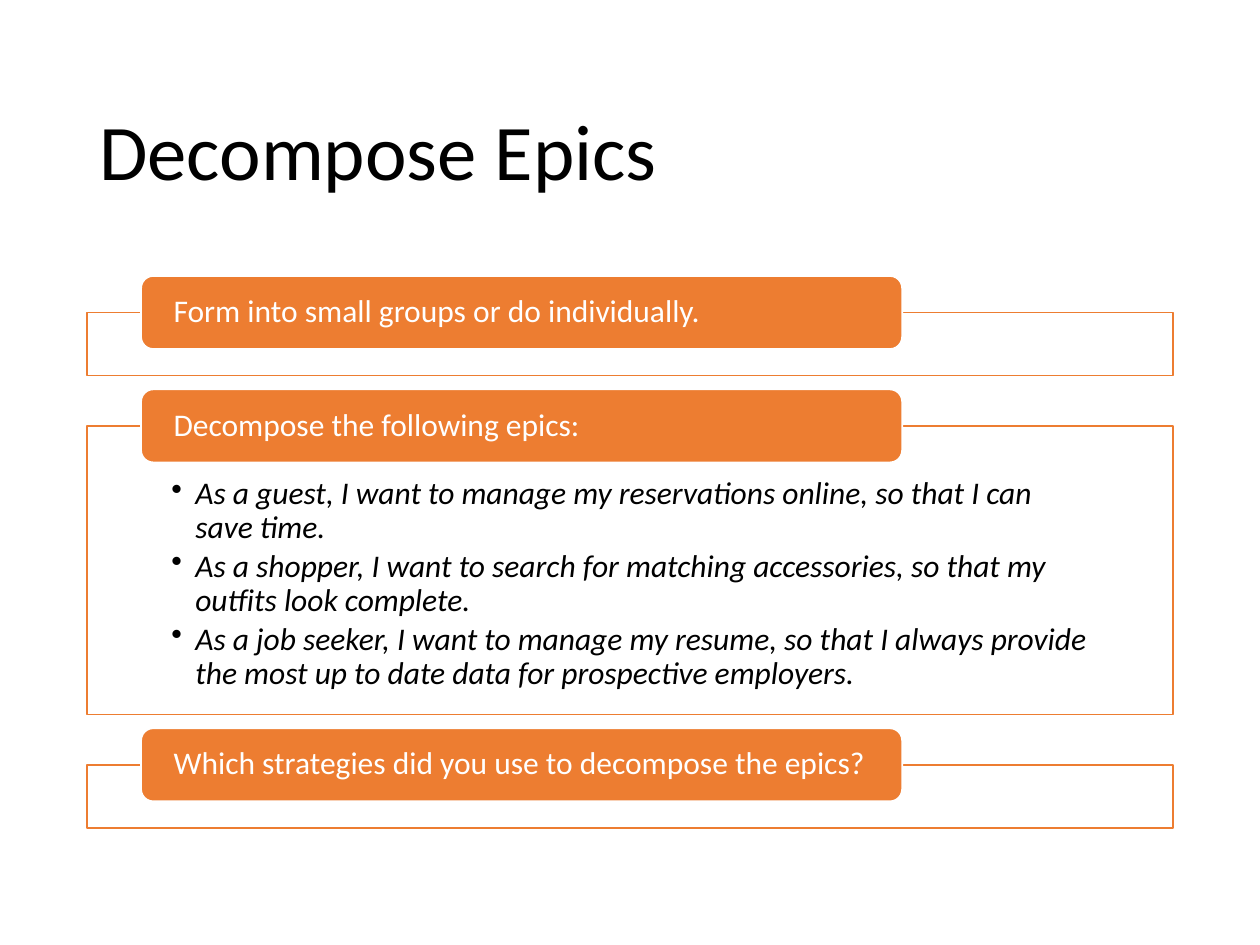
"""Build the Decompose Epics slide: three outlined panels, each with a heading tab."""
from dataclasses import dataclass

from lxml.etree import SubElement
from pptx import Presentation
from pptx.dml.color import RGBColor
from pptx.enum.shapes import MSO_SHAPE as Shape
from pptx.enum.text import MSO_ANCHOR as Anchor, PP_ALIGN as Align
from pptx.oxml.ns import qn
from pptx.util import Inches, Pt


@dataclass(frozen=True)
class Theme:
    font: str = "Calibri"
    accent: RGBColor = RGBColor(0xED, 0x7D, 0x31)
    light: RGBColor = RGBColor(0xFF, 0xFF, 0xFF)
    dark: RGBColor = RGBColor(0, 0, 0)
    title_size: Pt = Pt(45)
    body_size: Pt = Pt(18)


THEME = Theme()
LEFT, WIDTH = 0.69, 8.62
TAB_LEFT, TAB_WIDTH, TAB_HEIGHT = 1.12, 6.04, 0.58
FIRST_TOP, PANEL_OFFSET, GAP = 2.19, 0.29, 0.11
SECTIONS = [
    ("Form into small groups or do individually.", 0.5, []),
    ("Decompose the following epics:", 2.29, [
        "As a guest, I want to manage my reservations online, so that I can save time.",
        "As a shopper, I want to search for matching accessories, so that my outfits look complete.",
        "As a job seeker, I want to manage my resume, so that I always provide the most up to date "
        "data for prospective employers.",
    ]),
    ("Which strategies did you use to decompose the epics?", 0.5, []),
]


def write(shape, lines, size, color, margins, anchor, bullets=False):
    frame = shape.text_frame
    left, top, right, bottom = map(Inches, margins)
    settings = dict(word_wrap=True, vertical_anchor=anchor, margin_left=left,
                    margin_top=top, margin_right=right, margin_bottom=bottom)
    for name, value in settings.items():
        setattr(frame, name, value)
    for index, line in enumerate(lines):
        paragraph = frame.add_paragraph() if index else frame.paragraphs[0]
        paragraph.alignment = Align.LEFT
        paragraph.line_spacing = 0.9
        if bullets:
            paragraph.level = 1
            paragraph.space_after = Pt(2.7)
            properties = paragraph._p.get_or_add_pPr()
            properties.set("marL", str(Inches(0.19)))
            properties.set("indent", str(Inches(-0.19)))
            SubElement(properties, qn("a:buChar"), char="•")
        run = paragraph.add_run()
        run.text = line
        for name, value in dict(name=THEME.font, size=size, italic=bullets).items():
            setattr(run.font, name, value)
        run.font.color.rgb = color


def add_box(kind, box, fill, line):
    shape = slide.shapes.add_shape(kind, *map(Inches, box))
    shape.shadow.inherit = False
    shape.fill.solid()
    shape.fill.fore_color.rgb = fill
    shape.line.color.rgb = line
    shape.line.width = Pt(1)
    return shape


presentation = Presentation()
presentation.slide_width, presentation.slide_height = Inches(10), Inches(7.5)
slide = presentation.slides.add_slide(presentation.slide_layouts[6])

title = slide.shapes.add_textbox(*map(Inches, (LEFT, 0.61, WIDTH, 1.24)))
write(title, ["Decompose Epics"], THEME.title_size, THEME.dark,
      (0.1, 0.05, 0.1, 0.05), Anchor.MIDDLE)

top = FIRST_TOP
for heading, height, epics in SECTIONS:
    panel_top = top + PANEL_OFFSET
    panel = add_box(Shape.RECTANGLE, (LEFT, panel_top, WIDTH, height), THEME.light, THEME.accent)
    if epics:
        write(panel, epics, THEME.body_size, THEME.dark,
              (0.67, 0.41, 0.67, 0.14), Anchor.TOP, bullets=True)
    tab = add_box(Shape.ROUNDED_RECTANGLE, (TAB_LEFT, top, TAB_WIDTH, TAB_HEIGHT),
                  THEME.accent, THEME.light)
    write(tab, [heading], THEME.body_size, THEME.light, (0.23, 0, 0.23, 0), Anchor.MIDDLE)
    top = panel_top + height + GAP

presentation.save("out.pptx")
